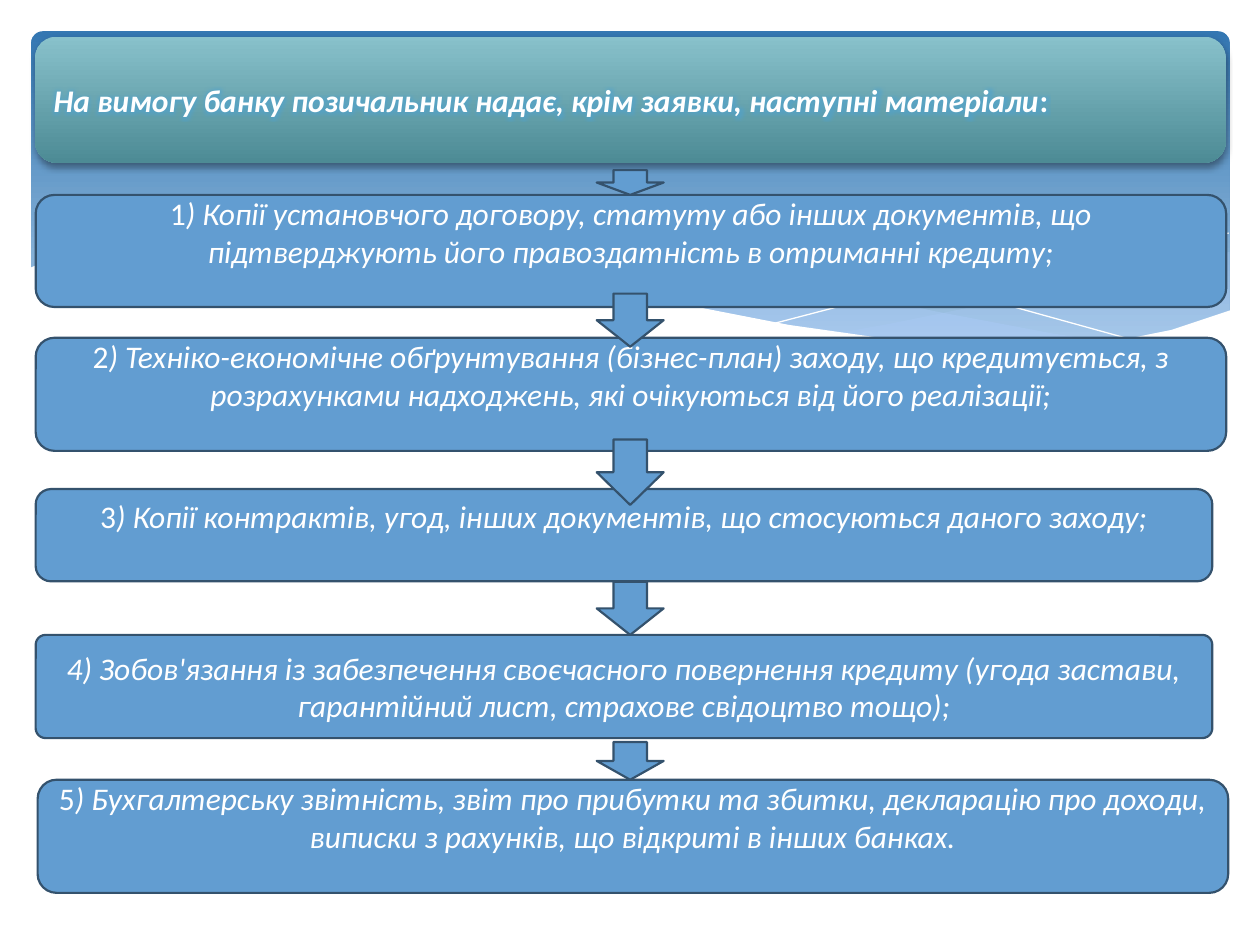
from dataclasses import dataclass

from pptx import Presentation
from pptx.dml.color import RGBColor
from pptx.enum.shapes import MSO_SHAPE
from pptx.enum.text import MSO_ANCHOR, MSO_AUTO_SIZE, PP_ALIGN
from pptx.oxml import parse_xml
from pptx.oxml.ns import nsdecls, qn
from pptx.util import Cm, Pt


@dataclass(frozen=True)
class Theme:
    font: str = "Calibri"
    size: int = 18
    text: str = "FFFFFF"
    paper: str = "FFFFFF"
    box: str = "629DD1"
    outline: str = "34526D"
    outline_width: float = 1.25
    panel: tuple = (("3477B2", 0), ("A1C4E3", 0.9))
    heading: tuple = (("88C1CB", 0), ("4D8B95", 1))
    wave: str = "ACCBF9"
    glow: str = "4FA3D1"
    shadow: str = "000000"


@dataclass(frozen=True)
class Step:
    """A box and the arrow that leads into it; lengths in centimetres."""
    number: str  # set upright, before the italic text
    text: str
    top: float
    height: float
    arrow_top: float
    arrow_overlap: float = 0  # how far the arrow's tip reaches into the box
    left: float = 0.72
    width: float = 24
    corner: float = 0.167
    room_below: float = 0.77  # one line left free under the text


THEME = Theme()
SLIDE_WIDTH, SLIDE_HEIGHT = 25.4, 19.05
ARROW_WIDTH, ARROW_LEFT = 1.35, 12.03
TEXT_INSET = 0.13
HEADING_FRAME = (0.71, 0.74, 24, 2.54)
HEADING_INSET = 0.37
HEADING = [
    ("На вимогу банку позичальник надає, крім заявки, наступні матеріали", True),
    (":", False),
]

STEPS = [
    Step("1", ") Копії установчого договору, статуту або інших документів, що підтверджують "
         "його правоздатність в отриманні кредиту;",
         top=3.93, height=2.26, arrow_top=3.43),
    Step("2", ") Техніко-економічне обґрунтування (бізнес-план) заходу, що кредитується, з "
         "розрахунками надходжень, які очікуються від його реалізації;",
         top=6.81, height=2.28, arrow_top=5.92, arrow_overlap=0.18),
    Step("3", ") Копії контрактів, угод, інших документів, що стосуються даного заходу;",
         top=9.86, height=1.86, arrow_top=8.86, arrow_overlap=0.32, width=23.72),
    Step("", "4) Зобов'язання із забезпечення своєчасного повернення кредиту (угода застави, "
         "гарантійний лист, страхове свідоцтво тощо);",
         top=12.8, height=2.08, arrow_top=11.73, width=23.72, corner=0.096, room_below=0),
    Step("5", ") Бухгалтерську звітність, звіт про прибутки та збитки, декларацію про доходи, "
         "виписки з рахунків, що відкриті в інших банках.",
         top=15.72, height=2.28, arrow_top=14.96, left=0.76),
]

# Backdrop curves as (x, y) points in centimetres
RIGHT_WAVE = [
    (24.79, 5.08), (23.75, 5.26), (21.87, 5.66), (19.79, 6.15), (17.93, 6.53), (16.79, 6.73),
    (18.26, 6.91), (19.53, 7.04), (20.68, 7.06), (21.92, 6.99), (23.19, 6.78), (24.1, 6.53),
    (24.79, 6.27)]
MIDDLE_WAVE = [
    (22.68, 6.93), (21.26, 6.73), (18.82, 6.27), (15.98, 5.64), (14.1, 5.21), (12.42, 4.93),
    (10.67, 4.75), (9.17, 4.7), (7.26, 4.85), (9.19, 5.16), (11.4, 5.64), (13.46, 6.1),
    (15.7, 6.55), (18.01, 6.91), (19.94, 7.06), (21.29, 7.06)]
FALLING_LINE = [
    (7.85, 4.95), (9.22, 4.8), (11, 4.75), (12.95, 4.88), (15.44, 5.18), (17.65, 5.56),
    (20.19, 6.12), (23.04, 6.91)]
RISING_LINE = [(15.57, 6.53), (18.29, 5.82), (20.47, 5.33), (22.73, 4.93), (24.77, 4.7)]
PAPER_WAVE = [
    (24.82, 6.25), (23.62, 6.65), (22.23, 6.93), (20.55, 7.04), (18.44, 6.91), (15.9, 6.55),
    (13.44, 6.07), (11.35, 5.59), (9.27, 5.13), (7.42, 4.83), (5.36, 4.67), (3.71, 4.7),
    (2.41, 4.85), (1.32, 5.11), (0.58, 5.41), (0.58, 8.36), (24.82, 8.36)]


def fill_solid(shape, value, opacity=100):
    shape.fill.solid()
    shape.fill.fore_color.rgb = RGBColor.from_string(value)
    if opacity < 100:
        tint = shape.element.spPr.find(qn("a:solidFill"))[0]
        tint.append(parse_xml(f'<a:alpha {nsdecls("a")} val="{opacity * 1000}"/>'))


def fill_downward(shape, stops):
    """Fill with a gradient that runs from top to bottom."""
    shape.fill.gradient()
    shape.fill.gradient_angle = 270
    for stop, (value, position) in zip(shape.fill.gradient_stops, stops):
        stop.color.rgb = RGBColor.from_string(value)
        stop.position = position


def set_line(shape, value, width):
    shape.line.color.rgb = RGBColor.from_string(value)
    shape.line.width = Pt(width)


def effect_list(kind, settings, value, opacity):
    return parse_xml(
        f'<a:effectLst {nsdecls("a")}><a:{kind} {settings}><a:srgbClr val="{value}">'
        f'<a:alpha val="{opacity * 1000}"/></a:srgbClr></a:{kind}></a:effectLst>')


def add_preset(page, kind, left, top, width, height):
    shape = page.shapes.add_shape(kind, Cm(left), Cm(top), Cm(width), Cm(height))
    shape.shadow.inherit = False
    fill_solid(shape, THEME.box)
    set_line(shape, THEME.outline, THEME.outline_width)
    return shape


def add_gradient_band(page, frame, corner, stops):
    band = add_preset(page, MSO_SHAPE.ROUNDED_RECTANGLE, *frame)
    band.adjustments[0] = corner
    fill_downward(band, stops)
    band.line.fill.background()
    return band


def add_curve(page, points, closed):
    start, *others = [(Cm(x), Cm(y)) for x, y in points]
    builder = page.shapes.build_freeform(*start)
    builder.add_line_segments(others, close=closed)
    curve = builder.convert_to_shape()
    curve.shadow.inherit = False
    return curve


def add_wave(page, points, value, opacity=100):
    wave = add_curve(page, points, closed=True)
    fill_solid(wave, value, opacity)
    wave.line.fill.background()


def add_thin_line(page, points):
    curve = add_curve(page, points, closed=False)
    curve.fill.background()
    set_line(curve, THEME.paper, 0)


def add_backdrop(page):
    add_gradient_band(page, (0.63, 0.63, 24.16, 6.86), 0.034, THEME.panel)
    add_wave(page, RIGHT_WAVE, THEME.wave, opacity=29)
    add_wave(page, MIDDLE_WAVE, THEME.wave, opacity=40)
    for points in (FALLING_LINE, RISING_LINE):
        add_thin_line(page, points)
    add_wave(page, PAPER_WAVE, THEME.paper)


def write(shape, runs, alignment, bold=False):
    """Write one paragraph of (text, italic) runs, centred vertically."""
    frame = shape.text_frame
    frame.word_wrap = True
    frame.auto_size = MSO_AUTO_SIZE.NONE
    frame.vertical_anchor = MSO_ANCHOR.MIDDLE
    para = frame.paragraphs[0]
    para.alignment = alignment
    font = para.font
    font.name, font.size, font.bold = THEME.font, Pt(THEME.size), bold
    font.color.rgb = RGBColor.from_string(THEME.text)
    for text, italic in runs:
        span = para.add_run()
        span.text = text
        span.font.italic = italic
    return para


def add_heading(page):
    """Lay the title placeholder over a rounded band with a shadow."""
    band = add_gradient_band(page, HEADING_FRAME, 0.167, THEME.heading)
    band.element.spPr.remove(band.element.spPr.find(qn("a:effectLst")))
    settings = f'blurRad="{Pt(4)}" dist="{Pt(2)}" dir="5400000" rotWithShape="0"'
    band.element.spPr.append(effect_list("outerShdw", settings, THEME.shadow, 38))

    title = page.shapes.title
    page.shapes.element.append(title.element)  # bring in front of the band
    title.left, title.top, title.width, title.height = map(Cm, HEADING_FRAME)
    title.text_frame.margin_left = Cm(HEADING_INSET)
    para = write(title, HEADING, PP_ALIGN.LEFT, bold=True)
    for span in para.runs:
        glow = effect_list("glow", f'rad="{Pt(5)}"', THEME.glow, 60)
        span.font._element.append(glow)


def add_step(page, step):
    box = add_preset(page, MSO_SHAPE.ROUNDED_RECTANGLE,
                     step.left, step.top, step.width, step.height)
    box.adjustments[0] = step.corner
    box.text_frame.margin_bottom = Cm(TEXT_INSET + step.room_below)
    runs = [(step.number, False), (step.text, True)]
    write(box, [run for run in runs if run[0]], PP_ALIGN.CENTER)


def add_arrow_into(page, step):
    height = step.top + step.arrow_overlap - step.arrow_top
    add_preset(page, MSO_SHAPE.DOWN_ARROW, ARROW_LEFT, step.arrow_top, ARROW_WIDTH, height)


def main():
    deck = Presentation()
    deck.slide_width, deck.slide_height = Cm(SLIDE_WIDTH), Cm(SLIDE_HEIGHT)
    page = deck.slides.add_slide(deck.slide_layouts.get_by_name("Title Only"))
    add_backdrop(page)
    add_heading(page)
    for add_part in (add_step, add_arrow_into):  # all arrows lie in front of the boxes
        for step in STEPS:
            add_part(page, step)
    deck.save("out.pptx")


if __name__ == "__main__":
    main()
